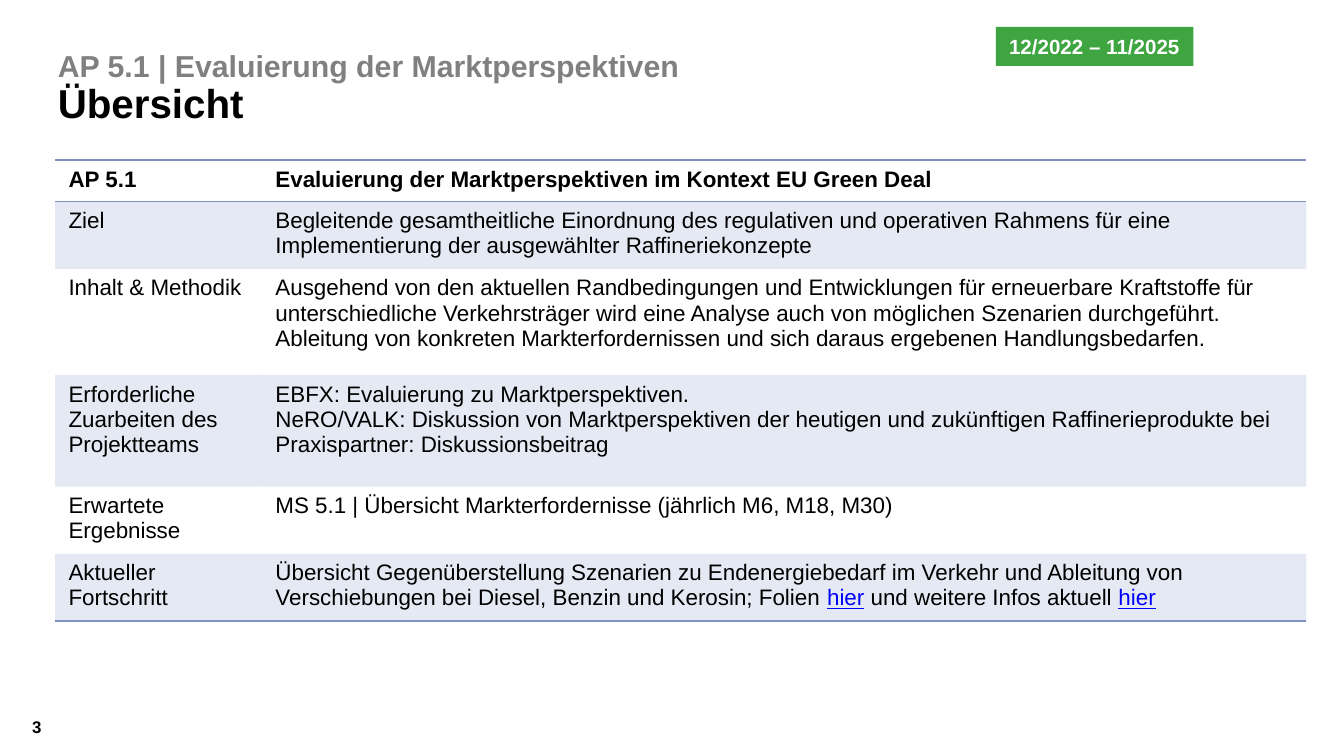
from dataclasses import dataclass
from lxml.etree import SubElement
from pptx import Presentation
from pptx.dml.color import RGBColor as Rgb
from pptx.enum.shapes import MSO_SHAPE as Shape
from pptx.enum.text import MSO_ANCHOR as Anchor, MSO_AUTO_SIZE as Auto, PP_ALIGN as Align
from pptx.oxml.ns import qn
from pptx.util import Inches, Pt


@dataclass(frozen=True)
class Theme:
    font: str = "Arial"
    ink: str = "000000"
    gray: str = "808080"
    link: str = "0000FF"
    white: str = "FFFFFF"
    green: str = "3EA540"
    blue: str = "7D92C3"
    tint: int = 20
    plain: str = "{2D5ABB26-0587-4C30-8999-92F81FD0307C}"
    lead: float = 16.2
    head: float = 21.6
    body: float = 12
    tag: float = 11
    page: float = 9


THEME = Theme()
COLS = (1.54, 7.77)
TALL = 3.42
ROWS = [
    (0.31, "AP 5.1", ["Evaluierung der Marktperspektiven im Kontext EU Green Deal"]),
    (0.46, "Ziel", [
        "Begleitende gesamtheitliche Einordnung des regulativen und operativen Rahmens "
        "für eine Implementierung der ausgewählter Raffineriekonzepte"]),
    (0.79, "Inhalt & Methodik", [
        "Ausgehend von den aktuellen Randbedingungen und Entwicklungen für erneuerbare "
        "Kraftstoffe für unterschiedliche Verkehrsträger wird eine Analyse auch von "
        "möglichen Szenarien durchgeführt.",
        "Ableitung von konkreten Markterfordernissen und sich daraus ergebenen "
        "Handlungsbedarfen."]),
    (0.83, "Erforderliche Zuarbeiten des Projektteams", [
        "EBFX: Evaluierung zu Marktperspektiven.",
        "NeRO/VALK: Diskussion von Marktperspektiven der heutigen und zukünftigen "
        "Raffinerieprodukte bei",
        "Praxispartner: Diskussionsbeitrag"]),
    (0.46, "Erwartete Ergebnisse", [
        "MS 5.1 | Übersicht Markterfordernisse (jährlich M6, M18, M30)"]),
    (0.18, "Aktueller Fortschritt", [
        "Übersicht Gegenüberstellung Szenarien zu Endenergiebedarf im Verkehr und "
        "Ableitung von Verschiebungen bei Diesel, Benzin und Kerosin; Folien |hier| "
        "und weitere Infos aktuell |hier"]),
]


def style(item, **values):
    for name, value in values.items():
        setattr(item, name, value)


def write(para, text, size, color=THEME.ink, bold=False, line=None):
    run = para.add_run()
    run.text = text
    style(run.font, name=THEME.font, size=Pt(size), bold=bold, underline=line)
    run.font.color.rgb = Rgb.from_string(color)


def inset(frame, anchor):
    style(frame, margin_left=0, margin_right=0, margin_top=0, margin_bottom=0,
          vertical_anchor=anchor, word_wrap=True)


def add_title(slide):
    title = slide.shapes.title
    style(title, left=Inches(0.43), top=Inches(0.32),
          width=Inches(7.51), height=Inches(0.63))
    inset(title.text_frame, Anchor.BOTTOM)
    para = title.text_frame.paragraphs[0]
    style(para, alignment=Align.LEFT, line_spacing=0.9)
    write(para, "AP 5.1 | Evaluierung der Marktperspektiven", THEME.lead, THEME.gray, True)
    para.add_line_break()
    write(para, "Übersicht", THEME.head, bold=True)


def add_page(slide):
    box = slide.shapes.add_textbox(Inches(0.24), Inches(5.19), Inches(0.36), Inches(0.43))
    inset(box.text_frame, Anchor.MIDDLE)
    write(box.text_frame.paragraphs[0], "3", THEME.page, bold=True)


def add_tag(slide):
    tag = slide.shapes.add_shape(
        Shape.RECTANGLE, Inches(7.41), Inches(0.2), Inches(1.47), Inches(0.29))
    tag.shadow.inherit = False
    tag.fill.solid()
    tag.fill.fore_color.rgb = Rgb.from_string(THEME.green)
    tag.line.fill.background()
    style(tag.text_frame, word_wrap=True, vertical_anchor=Anchor.TOP,
          auto_size=Auto.SHAPE_TO_FIT_TEXT)
    para = tag.text_frame.paragraphs[0]
    para.alignment = Align.LEFT
    write(para, "12/2022 – 11/2025", THEME.tag, THEME.white, True)


def rule(cell, side):
    props = cell._tc.get_or_add_tcPr()
    line = SubElement(props, qn(f"a:{side}"), w=str(Pt(1)))
    fill = SubElement(line, qn("a:solidFill"))
    SubElement(fill, qn("a:srgbClr"), val=THEME.blue)


def shade(cell, banded):
    if not banded:
        cell.fill.background()
        return
    cell.fill.solid()
    cell.fill.fore_color.rgb = Rgb.from_string(THEME.blue)
    color = cell._tc.tcPr.find(qn("a:solidFill")).find(qn("a:srgbClr"))
    SubElement(color, qn("a:alpha"), val=str(THEME.tint * 1000))


def fill_cell(cell, lines, bold):
    frame = cell.text_frame
    for i, text in enumerate(lines):
        para = frame.add_paragraph() if i else frame.paragraphs[0]
        for j, part in enumerate(text.split("|hier")):
            if j:
                write(para, "hier", THEME.body, THEME.link, line=True)
            if part:
                write(para, part.removeprefix("|"), THEME.body, bold=bold)


def add_grid(slide):
    grid = slide.shapes.add_table(
        len(ROWS), len(COLS), Inches(0.41), Inches(1.19),
        Inches(sum(COLS)), Inches(TALL))
    table = grid.table
    style(table, first_row=False, horz_banding=False)
    table._tbl.tblPr.find(qn("a:tableStyleId")).text = THEME.plain
    for col, width in zip(table.columns, COLS):
        col.width = Inches(width)
    for i, (height, label, lines) in enumerate(ROWS):
        table.rows[i].height = Inches(height)
        for j, texts in enumerate(([label], lines)):
            cell = table.cell(i, j)
            if i == 0:
                rule(cell, "lnT")
            if i in (0, len(ROWS) - 1):
                rule(cell, "lnB")
            shade(cell, i % 2 == 1)
            fill_cell(cell, texts, i == 0)
    grid.height = Inches(TALL)


def main():
    deck = Presentation()
    deck.slide_width = Inches(10)
    deck.slide_height = Inches(10 * 9 / 16)
    slide = deck.slides.add_slide(deck.slide_layouts[5])
    add_page(slide)
    add_title(slide)
    add_grid(slide)
    add_tag(slide)
    deck.save("out.pptx")


if __name__ == "__main__":
    main()
